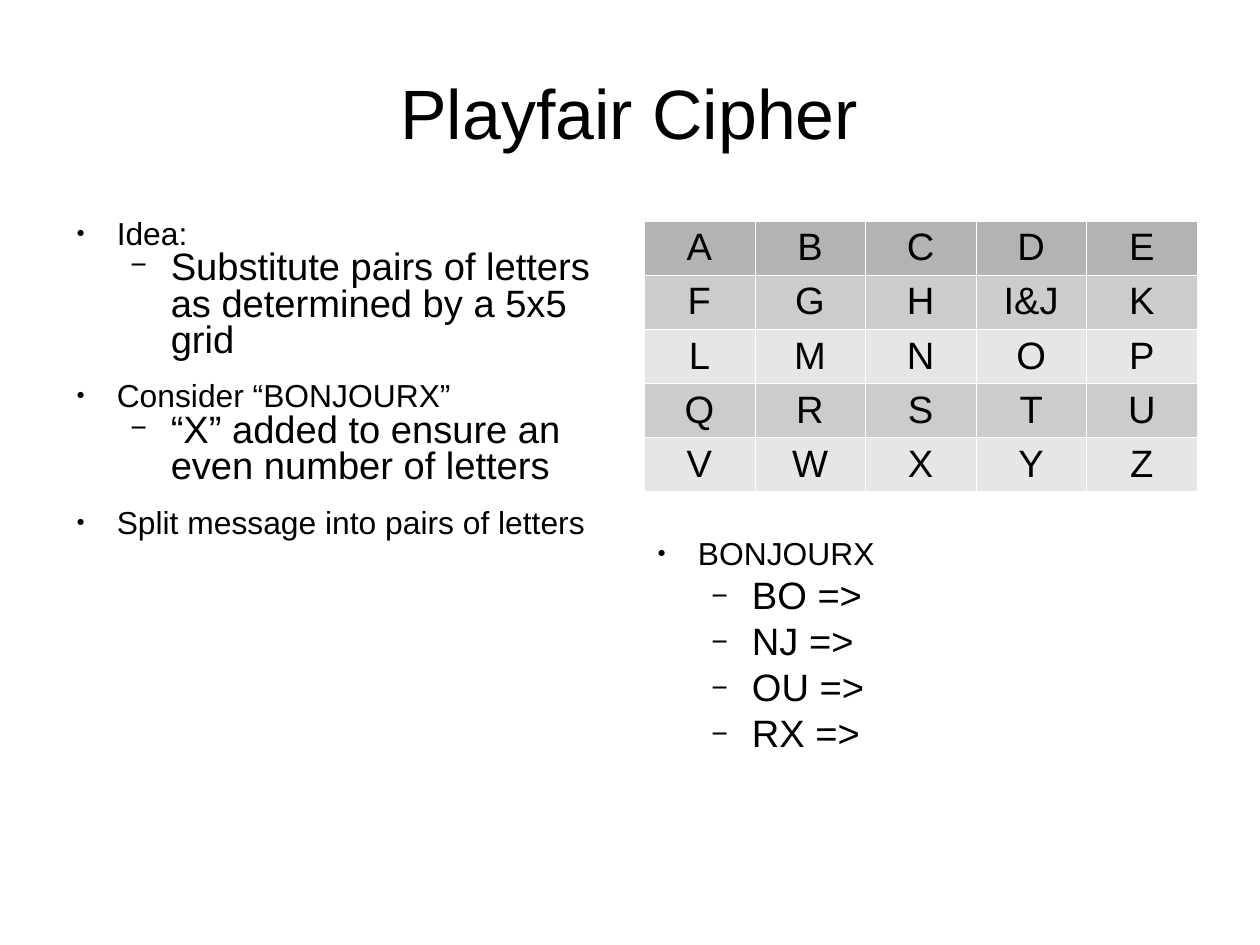
from lxml import etree
from pptx import Presentation
from pptx.dml.color import RGBColor
from pptx.enum import text as t
from pptx.oxml.ns import qn
from pptx.util import Pt

# Content
TITLE = "Playfair Cipher"
IDEA = [
    (0, "Idea:"),
    (1, "Substitute pairs of letters as determined by a 5x5 grid"),
    (0, "Consider “BONJOURX”"),
    (1, "“X” added to ensure an even number of letters"),
    (0, "Split message into pairs of letters"),
]
PAIRS = [(0, "BONJOURX"), (1, "BO =>"), (1, "NJ =>"), (1, "OU =>"), (1, "RX =>")]
GRID = [
    ["A", "B", "C", "D", "E"],
    ["F", "G", "H", "I&J", "K"],
    ["L", "M", "N", "O", "P"],
    ["Q", "R", "S", "T", "U"],
    ["V", "W", "X", "Y", "Z"],
]

# Style
FONT, BLACK, WHITE = "Arial", "000000", "FFFFFF"
HEAD, BANDS = "B3B3B3", ["E6E6E6", "CCCCCC"]
# Per level: size, left margin, bullet, bullet percent
LEVELS = [(20, 34, "●", 45), (24, 68, "−", 75)]
HANG = 25.5

# Layout
LEFT, RIGHT, TOP, WIDE = 39.6, 405.7, 139, 348.5
ROW = 34.1


def color(code):
    return RGBColor.from_string(code)


def add_run(para, words, size):
    run = para.add_run()
    run.text = words
    run.font.name, run.font.size = FONT, Pt(size)
    run.font.color.rgb = color(BLACK)


def add_node(parent, tag, **attrs):
    return etree.SubElement(parent, qn(tag), attrs)


def add_box(x, y, w, h):
    frame = slide.shapes.add_textbox(Pt(x), Pt(y), Pt(w), Pt(h)).text_frame
    frame.word_wrap = True
    frame.margin_left = frame.margin_right = 0
    frame.margin_top = frame.margin_bottom = 0
    return frame


def add_list(items, x, y, h, lines, gaps):
    frame = add_box(x, y, WIDE, h)
    for i, (level, words) in enumerate(items):
        size, indent, mark, scale = LEVELS[level]
        para = frame.paragraphs[0] if i == 0 else frame.add_paragraph()
        para.level, para.line_spacing = level, lines
        para.space_before = Pt(gaps[level])
        props = para._p.get_or_add_pPr()
        props.set("marL", str(Pt(indent)))
        props.set("indent", str(-Pt(HANG)))
        add_node(add_node(props, "a:buClr"), "a:srgbClr", val=BLACK)
        add_node(props, "a:buSzPct", val=str(scale * 1000))
        add_node(props, "a:buFont", typeface=FONT)
        add_node(props, "a:buChar", char=mark)
        add_run(para, words, size)


def add_border(cell):
    props = cell._tc.get_or_add_tcPr()
    for side in "LRTB":
        line = add_node(props, "a:ln" + side, w=str(Pt(0.06)))
        add_node(add_node(line, "a:solidFill"), "a:srgbClr", val=WHITE)


deck = Presentation()
deck.slide_width, deck.slide_height = Pt(793.7), Pt(595.28)
slide = deck.slides.add_slide(deck.slide_layouts[6])

# Left list
add_list(IDEA, LEFT, TOP, 345, 0.8, (14.2, 0))

# Letter grid
count = len(GRID)
table = slide.shapes.add_table(
    count, count, Pt(RIGHT), Pt(TOP), Pt(WIDE), Pt(ROW * count)).table
for r, letters in enumerate(GRID):
    table.rows[r].height = Pt(ROW)
    for c, letter in enumerate(letters):
        cell = table.cell(r, c)
        add_border(cell)
        cell.margin_bottom = Pt(1.6)
        cell.fill.solid()
        cell.fill.fore_color.rgb = color(BANDS[r % 2] if r else HEAD)
        para = cell.text_frame.paragraphs[0]
        para.alignment = t.PP_ALIGN.CENTER
        add_run(para, letter, 24)

# Title
frame = add_box(LEFT, 23.8, 714, 99.4)
frame.vertical_anchor = t.MSO_ANCHOR.MIDDLE
para = frame.paragraphs[0]
para.alignment, para.line_spacing = t.PP_ALIGN.CENTER, 0.9
add_run(para, TITLE, 44)

# Right list
add_list(PAIRS, RIGHT, 338.7, 165, 0.9, (14.2, 3.1))

deck.save("out.pptx")
